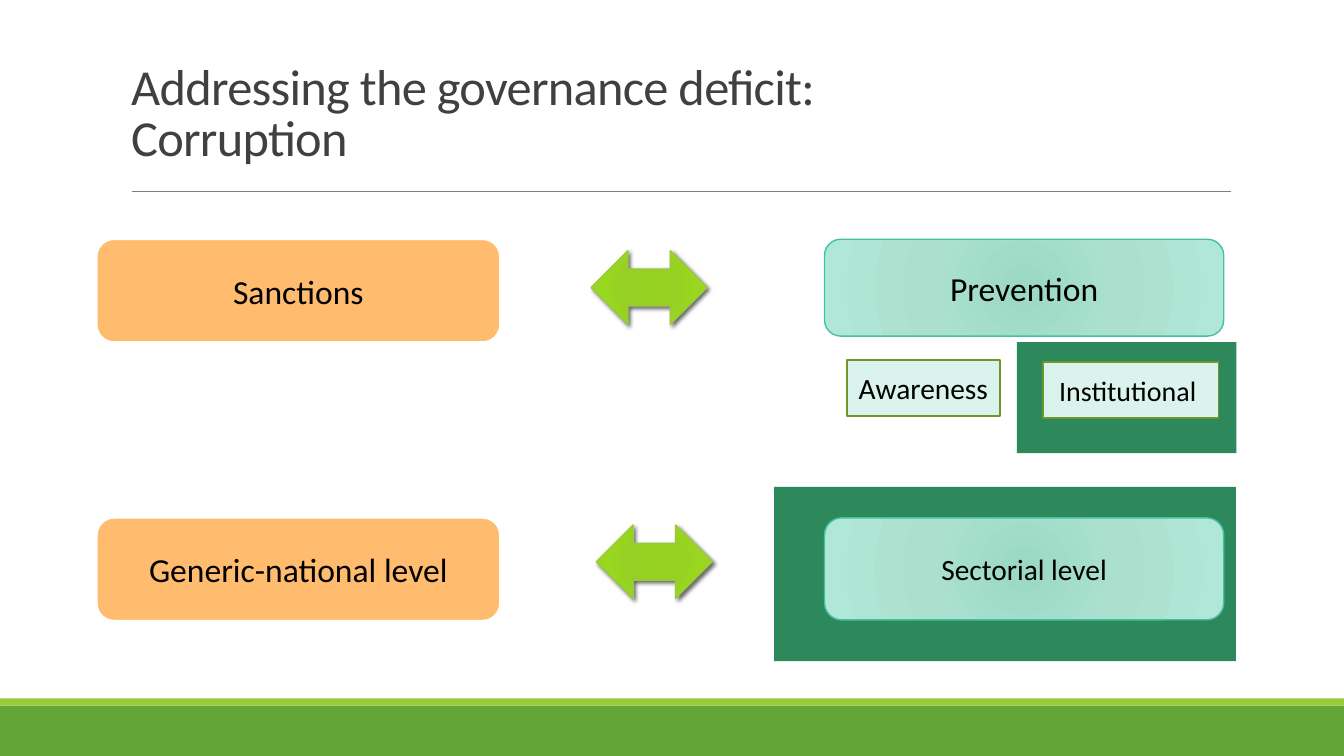
from copy import deepcopy
from dataclasses import dataclass

from lxml.etree import SubElement
from pptx import Presentation
from pptx.dml.color import RGBColor
from pptx.enum.shapes import MSO_CONNECTOR, MSO_SHAPE
from pptx.enum.text import MSO_ANCHOR, MSO_AUTO_SIZE, PP_ALIGN
from pptx.oxml import parse_xml
from pptx.oxml.ns import nsdecls, qn
from pptx.util import Cm, Pt


@dataclass(frozen=True)
class Theme:
    """Colours, gradients and type sizes of the slide."""
    font: str = "Calibri"
    title_ink: str = "404040"
    ink: str = "000000"
    rule: str = "808080"
    footer: str = "63A537"
    lime: str = "99CB38"
    highlight: str = "2D895B"
    orange: str = "FFBC6F"
    white: str = "FFFFFF"
    pale: str = "DAF3ED"
    olive: str = "719629"
    teal: str = "44C1A3"
    mint_stops: tuple = ((0, "9AD9C5"), (45, "ABE0CF"), (100, "B1E7D6"))
    lime_stops: tuple = ((0, "95D220"), (34, "96D023"), (70, "99D720"), (100, "9BD231"))
    title_size: int = 36
    large: int = 24
    medium: int = 21
    small: int = 20


THEME = Theme()


def apply_format(target, values):
    """Set each attribute in values on target."""
    for name, value in values.items():
        setattr(target, name, value)


def format_font(font, size, colour):
    """Give a font the theme face, a size and a colour."""
    apply_format(font, {"name": THEME.font, "size": Pt(size)})
    font.color.rgb = RGBColor.from_string(colour)


def fill_radial(block, stops):
    """Fill a block with a circular gradient."""
    block.fill.gradient()
    plain = block._element.spPr.find(qn("a:gradFill"))
    colours = "".join(
        f'<a:gs pos="{position * 1000}"><a:srgbClr val="{colour}"/></a:gs>'
        for position, colour in stops
    )
    radial = parse_xml(
        f'<a:gradFill {nsdecls("a")} rotWithShape="1"><a:gsLst>{colours}</a:gsLst>'
        '<a:path path="circle"><a:fillToRect l="100000" t="100000" r="100000" b="100000"/>'
        "</a:path></a:gradFill>"
    )
    plain.getparent().replace(plain, radial)


def add_block(slide, kind, box, fill, outline=None, width=1.25):
    """Add a preset shape with a solid or radial fill."""
    block = slide.shapes.add_shape(kind, *map(Cm, box))
    block.shadow.inherit = False
    if isinstance(fill, tuple):
        fill_radial(block, fill)
    else:
        block.fill.solid()
        block.fill.fore_color.rgb = RGBColor.from_string(fill)
    if outline:
        block.line.color.rgb = RGBColor.from_string(outline)
        block.line.width = Pt(width)
    else:
        block.line.fill.background()
    return block


def add_label(block, wording, size):
    """Write centred wording in a block."""
    frame = block.text_frame
    apply_format(frame, {"word_wrap": True, "vertical_anchor": MSO_ANCHOR.MIDDLE})
    paragraph = frame.paragraphs[0]
    paragraph.alignment = PP_ALIGN.CENTER
    run = paragraph.add_run()
    run.text = wording
    format_font(run.font, size, THEME.ink)


def add_contrast_arrow(slide, left, top):
    """Add a shadowed double arrow between two opposed approaches."""
    arrow = add_block(slide, MSO_SHAPE.LEFT_RIGHT_ARROW, (left, top, 2.92, 1.85),
                      THEME.lime_stops, THEME.lime, 1)
    effects = arrow._element.spPr.find(qn("a:effectLst"))
    effects.append(parse_xml(
        f'<a:outerShdw {nsdecls("a")} blurRad="{Pt(3)}" dist="{Pt(2)}" dir="2700000" '
        'rotWithShape="0"><a:srgbClr val="000000"><a:alpha val="60000"/></a:srgbClr>'
        "</a:outerShdw>"
    ))


def add_title_rule(slide):
    """Draw the thin rule under the title."""
    rule = slide.shapes.add_connector(
        MSO_CONNECTOR.STRAIGHT, Cm(3.33), Cm(4.82), Cm(31.01), Cm(4.82))
    rule.line.color.rgb = RGBColor.from_string(THEME.rule)
    rule.line.width = Pt(0.5)
    SubElement(rule._element.spPr, qn("a:effectLst"))


def format_title(title, wording):
    """Place and style the title placeholder."""
    apply_format(title, {"left": Cm(3.05), "top": Cm(0.3),
                         "width": Cm(27.94), "height": Cm(4.04)})
    frame = title.text_frame
    apply_format(frame, {"word_wrap": True, "auto_size": MSO_AUTO_SIZE.NONE,
                         "vertical_anchor": MSO_ANCHOR.BOTTOM})
    paragraph = frame.paragraphs[0]
    paragraph.text = wording
    apply_format(paragraph, {"alignment": PP_ALIGN.LEFT, "line_spacing": 0.85})
    for run in paragraph.runs:
        format_font(run.font, THEME.title_size, THEME.title_ink)
        run._r.get_or_add_rPr().set("spc", "-50")
    for line_break in paragraph._p.findall(qn("a:br")):
        line_break.append(deepcopy(paragraph.runs[0]._r.rPr))


def main():
    """Build and save the slide."""
    deck = Presentation()
    apply_format(deck, {"slide_width": Cm(33.87), "slide_height": Cm(19.05)})
    slide = deck.slides.add_slide(deck.slide_layouts[5])
    format_title(slide.shapes.title, "Addressing the governance deficit:\vCorruption")

    panels = (
        ((0, 17.78, 33.87, 1.27), THEME.footer),
        ((0, 17.6, 33.87, 0.18), THEME.lime),
        ((25.63, 8.62, 5.53, 2.8), THEME.highlight),
        ((19.51, 12.27, 11.64, 4.39), THEME.highlight),
    )
    for box, fill in panels:
        add_block(slide, MSO_SHAPE.RECTANGLE, box, fill)
    add_title_rule(slide)

    contrasts = (
        (6.03, "Sanctions", "Prevention", 2.44, THEME.large, 14.9, 6.32),
        (13.05, "Generic-national level", "Sectorial level", 2.57, THEME.medium, 15.03, 13.23),
    )
    for top, common, preferred, height, size, arrow_left, arrow_top in contrasts:
        mint = add_block(slide, MSO_SHAPE.ROUNDED_RECTANGLE, (20.78, top, 10.06, height),
                         THEME.mint_stops, THEME.teal, 1)
        add_label(mint, preferred, size)
        orange = add_block(slide, MSO_SHAPE.ROUNDED_RECTANGLE, (2.44, top, 10.16, 2.59),
                           THEME.orange, THEME.white)
        add_label(orange, common, THEME.large)
        add_contrast_arrow(slide, arrow_left, arrow_top)

    measures = (
        ("Awareness", (21.34, 9.07, 3.86, 1.42), THEME.medium),
        ("Institutional ", (26.29, 9.12, 4.42, 1.42), THEME.small),
    )
    for wording, box, size in measures:
        measure = add_block(slide, MSO_SHAPE.RECTANGLE, box, THEME.pale, THEME.olive)
        add_label(measure, wording, size)

    deck.save("out.pptx")


if __name__ == "__main__":
    main()
